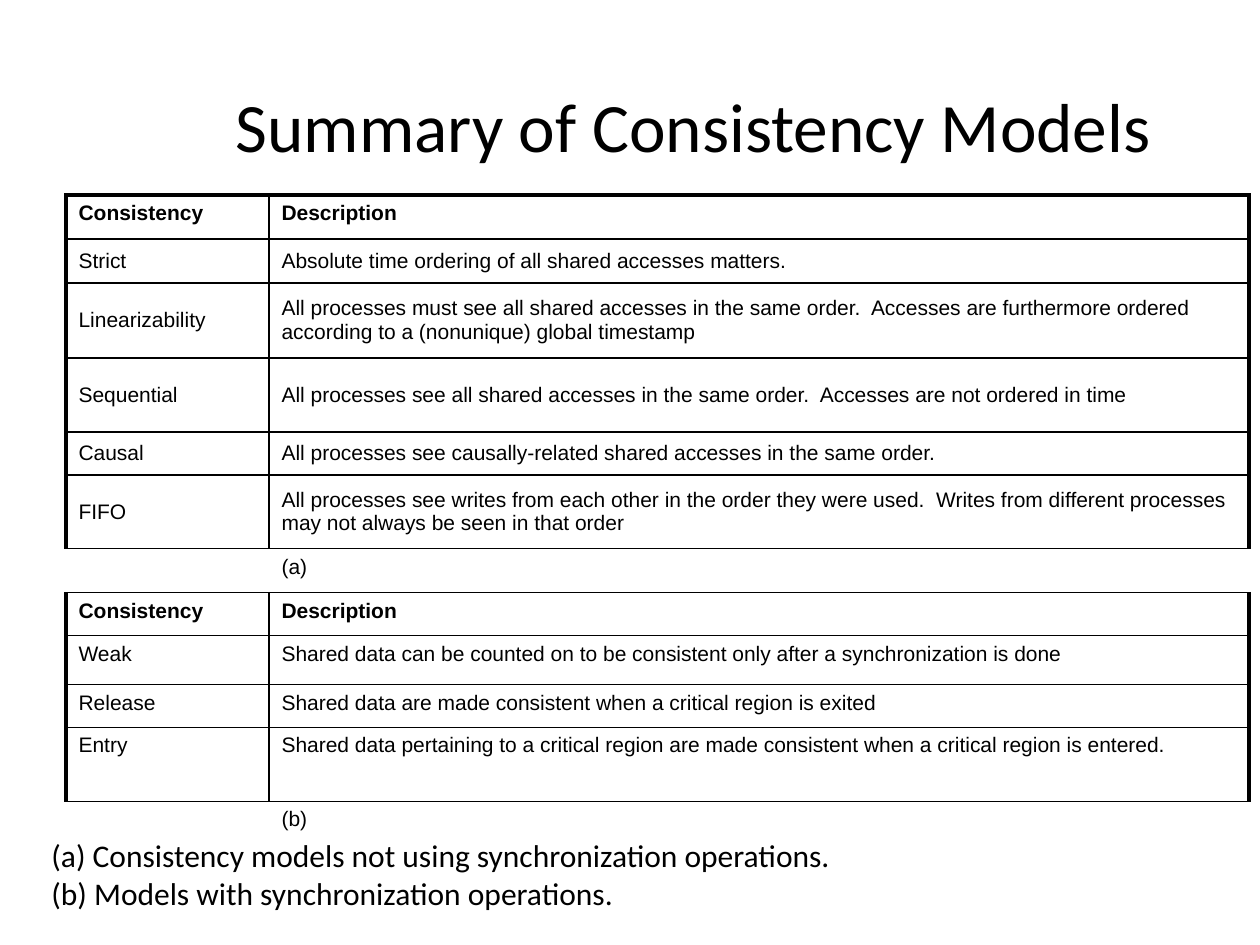
from lxml.etree import SubElement
from pptx import Presentation
from pptx.dml.color import RGBColor
from pptx.enum.text import MSO_ANCHOR, PP_ALIGN
from pptx.oxml.ns import qn
from pptx.util import Emu, Pt

PX = 914400 // 126
BLACK = "000000"
THIN, THICK = 1, 2.25

TITLE = "Summary of Consistency Models"
NOTES = [
    " (a) Consistency models not using synchronization operations.",
    " (b) Models with synchronization operations.",
]
HEADER = ("Consistency", "Description")
# Each row: height in px, kind, (consistency, description)
ROWS = [
    (44, "header", HEADER),
    (44, "middle", ("Strict", "Absolute time ordering of all shared accesses matters.")),
    (75, "middle", ("Linearizability",
                    "All processes must see all shared accesses in the same order.  Accesses are "
                    "furthermore ordered according to a (nonunique) global timestamp")),
    (74, "middle", ("Sequential",
                    "All processes see all shared accesses in the same order.  "
                    "Accesses are not ordered in time")),
    (43, "middle", ("Causal",
                    "All processes see causally-related shared accesses in the same order.")),
    (74, "middle", ("FIFO",
                    "All processes see writes from each other in the order they were used.  "
                    "Writes from different processes may not always be seen in that order")),
    (44, "caption", ("", "(a)")),
    (43, "header", HEADER),
    (49, "top", ("Weak",
                 "Shared data can be counted on to be consistent only after "
                 "a synchronization is done")),
    (43, "top", ("Release", "Shared data are made consistent when a critical region is exited")),
    (74, "top", ("Entry",
                 "Shared data pertaining to a critical region are made consistent "
                 "when a critical region is entered.")),
    (44, "caption", ("", "(b)")),
]
COLUMNS = [203, 980]
TABLE_LEFT, TABLE_TOP = 66, 195


def px(value):
    return Emu(value * PX)


def rgb(color):
    return RGBColor.from_string(color)


def write(paragraph, text, **font_values):
    run = paragraph.add_run()
    run.text = text
    run.font.color.rgb = rgb(BLACK)
    for name, value in font_values.items():
        setattr(run.font, name, value)


def add_text(slide, box, lines, size, anchor, align):
    frame = slide.shapes.add_textbox(*map(px, box)).text_frame
    frame.word_wrap = True
    frame.vertical_anchor = anchor
    for index, line in enumerate(lines):
        paragraph = frame.add_paragraph() if index else frame.paragraphs[0]
        paragraph.alignment = align
        write(paragraph, line, name="Calibri", size=Pt(size))


def set_borders(cell, widths):
    """Draw the left, right, top and bottom borders; a width of 0 hides one."""
    properties = cell._tc.get_or_add_tcPr()
    for index, (side, width) in enumerate(zip(("lnL", "lnR", "lnT", "lnB"), widths)):
        line = properties.makeelement(qn(f"a:{side}"), {"w": str(Pt(width))})
        properties.insert(index, line)
        if width:
            fill = SubElement(line, qn("a:solidFill"))
            SubElement(fill, qn("a:srgbClr"), val=BLACK)
        else:
            SubElement(line, qn("a:noFill"))


def border_widths(row, column):
    caption = ROWS[row][1] == "caption"
    left = 0 if caption else THIN if column else THICK
    right = 0 if caption else THICK if column else THIN
    top = THIN if row else THICK
    bottom = 0 if row == len(ROWS) - 1 else THIN
    return left, right, top, bottom


def add_models_table(slide):
    heights = [height for height, _, _ in ROWS]
    table = slide.shapes.add_table(
        len(ROWS), len(COLUMNS), px(TABLE_LEFT), px(TABLE_TOP),
        px(sum(COLUMNS)), px(sum(heights))).table
    table.first_row = table.horz_banding = False
    for column, width in zip(table.columns, COLUMNS):
        column.width = px(width)
    for r, (height, kind, texts) in enumerate(ROWS):
        table.rows[r].height = px(height)
        for c, text in enumerate(texts):
            cell = table.cell(r, c)
            cell.fill.background()
            cell.vertical_anchor = MSO_ANCHOR.MIDDLE if kind == "middle" else MSO_ANCHOR.TOP
            set_borders(cell, border_widths(r, c))
            paragraph = cell.text_frame.paragraphs[0]
            if text:
                write(paragraph, text, name="Arial", size=Pt(12), bold=kind == "header")
            else:
                # Keeps an empty cell from stretching its row
                SubElement(paragraph._p, qn("a:endParaRPr"), sz="1200")


def main():
    deck = Presentation()
    deck.slide_width, deck.slide_height = px(1260), px(945)
    slide = deck.slides.add_slide(deck.slide_layouts[6])
    add_models_table(slide)
    add_text(slide, (158, 88, 1071, 73), [TITLE], 39.6, MSO_ANCHOR.MIDDLE, PP_ALIGN.CENTER)
    add_text(slide, (32, 830, 975, 94), NOTES, 18, MSO_ANCHOR.TOP, PP_ALIGN.LEFT)
    deck.save("out.pptx")


if __name__ == "__main__":
    main()
